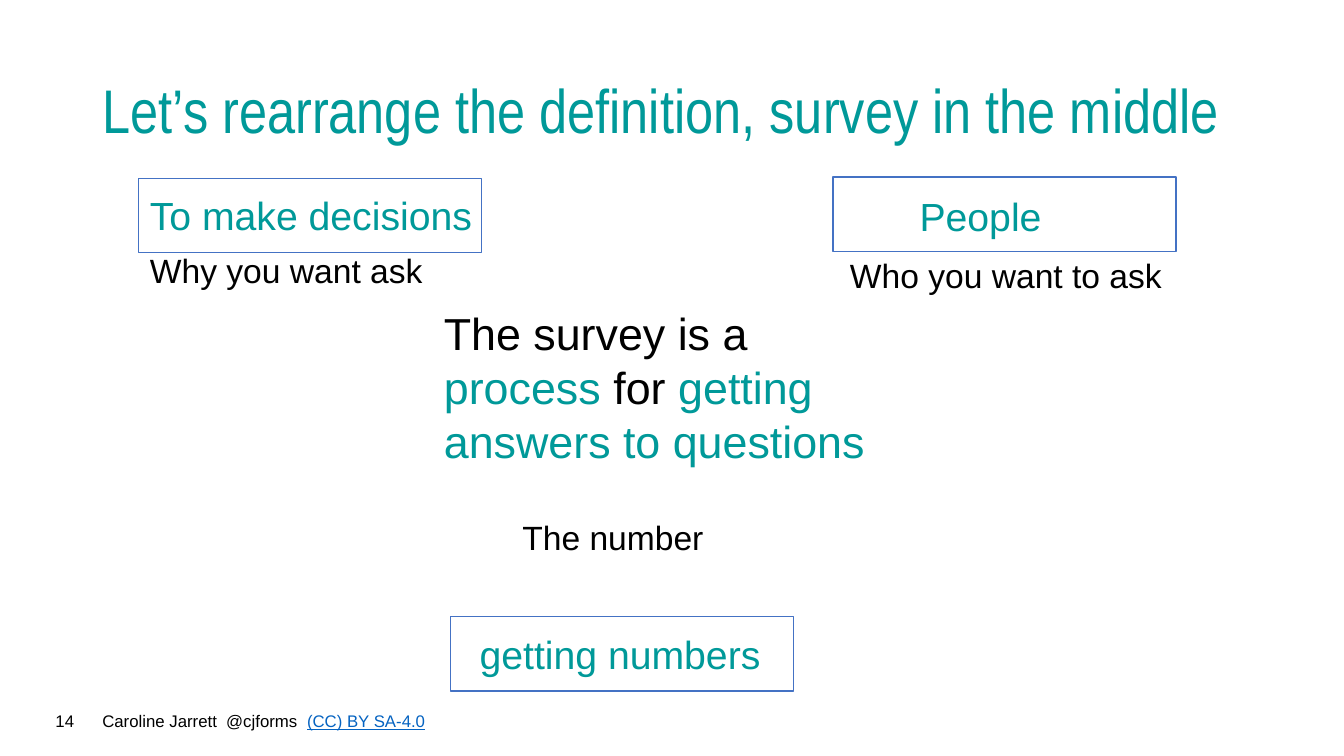
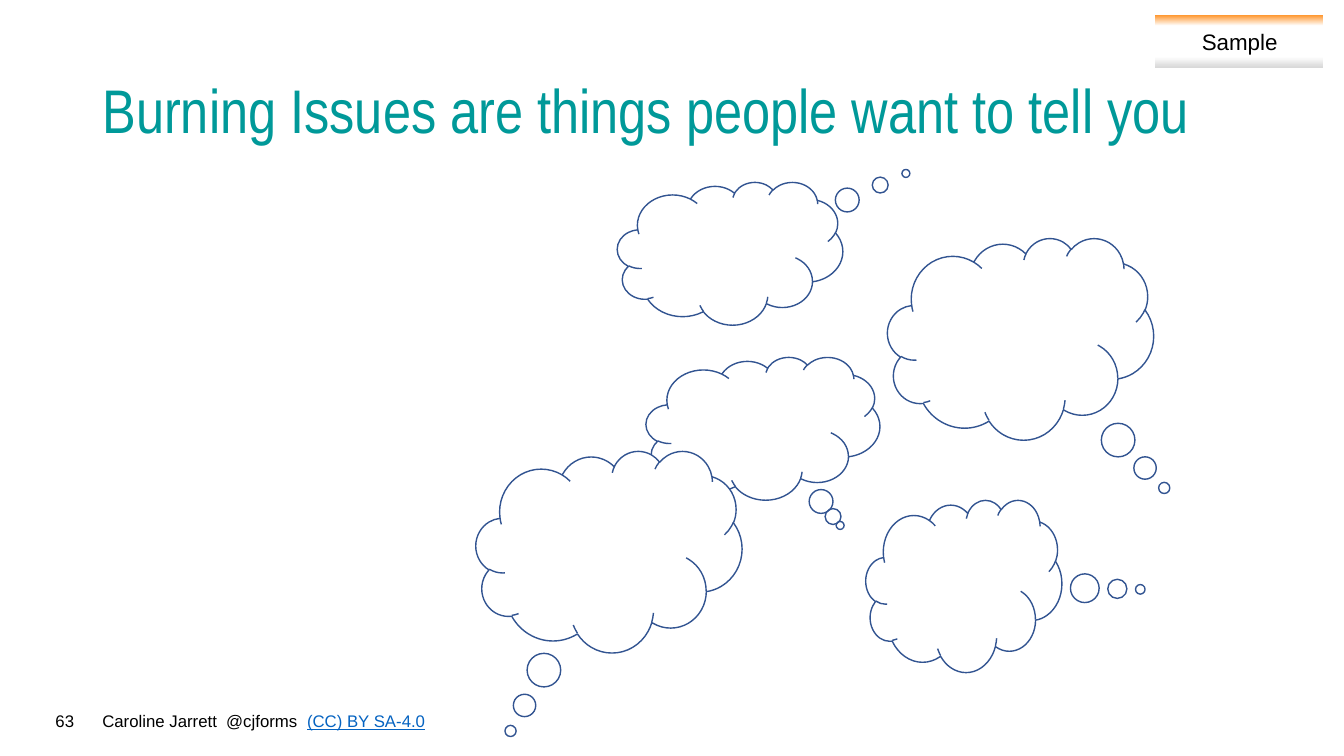
from copy import deepcopy

from pptx import Presentation
from pptx.dml.color import RGBColor
from pptx.enum.shapes import MSO_SHAPE as Shape
from pptx.enum.text import MSO_ANCHOR as Anchor, MSO_AUTO_SIZE as AutoSize, PP_ALIGN as Align
from pptx.oxml.ns import qn
from pptx.util import Pt

TEAL, BLACK, WHITE = "009999", "000000", "FFFFFF"
BOX_BLUE, CLOUD_BLUE, LINK_BLUE = "4472C4", "325491", "0563C1"
TITLE_ONLY = 5


def rgb(hex_code):
    return RGBColor.from_string(hex_code)


class Deck:
    """Holds the shared style and the slide being built; lengths are in points."""

    body_font, title_font = "Arial", "Arial Narrow"

    def __init__(self):
        self.prs = Presentation()
        self.prs.slide_width, self.prs.slide_height = Pt(960), Pt(540)
        self.slide = None

    def style(self, paragraph, size, color, align=Align.LEFT, font=None):
        paragraph.alignment = align
        paragraph.font.name = font or self.body_font
        paragraph.font.size = Pt(size)
        paragraph.font.color.rgb = rgb(color)

    def new_slide(self, title, number):
        self.slide = self.prs.slides.add_slide(self.prs.slide_layouts[TITLE_ONLY])
        heading = self.slide.shapes.title
        heading.left, heading.top, heading.width, heading.height = Pt(66), Pt(29), Pt(828), Pt(104)
        frame = heading.text_frame
        frame.text = title
        frame.word_wrap = True
        frame.auto_size = AutoSize.NONE
        frame.vertical_anchor = Anchor.MIDDLE
        self.style(frame.paragraphs[0], 44, TEAL, font=self.title_font)
        frame.paragraphs[0].line_spacing = 0.9
        self.footer(number)

    def footer(self, number):
        credit = self.text("Caroline Jarrett  @cjforms  ", 66, 504, 411, 22, 12)
        licence = credit.add_run()
        licence.text = "(CC) BY SA-4.0"
        licence.font.underline = True
        licence.font.color.rgb = rgb(LINK_BLUE)
        self.text(str(number), 0, 504, 60, 22, 12, align=Align.RIGHT)

    def text(self, words, left, top, width, height, size, color=BLACK, align=Align.LEFT):
        """Add a one-paragraph text box and return its paragraph."""
        box = self.slide.shapes.add_textbox(Pt(left), Pt(top), Pt(width), Pt(height))
        frame = box.text_frame
        frame.word_wrap = True
        frame.auto_size = AutoSize.SHAPE_TO_FIT_TEXT
        paragraph = frame.paragraphs[0]
        paragraph.add_run().text = words
        self.style(paragraph, size, color, align)
        return paragraph

    def definition(self, lines, left, top, width, height, size):
        """Add a text box of lines, each a list of (words, color) runs."""
        box = self.slide.shapes.add_textbox(Pt(left), Pt(top), Pt(width), Pt(height))
        frame = box.text_frame
        frame.word_wrap = True
        for index, line in enumerate(lines):
            paragraph = frame.add_paragraph() if index else frame.paragraphs[0]
            self.style(paragraph, size, BLACK)
            for words, color in line:
                run = paragraph.add_run()
                run.text = words
                run.font.color.rgb = rgb(color)

    def shape(self, kind, left, top, width, height, line=None, fill=None):
        shape = self.slide.shapes.add_shape(kind, Pt(left), Pt(top), Pt(width), Pt(height))
        shape.shadow.inherit = False
        if fill:
            shape.fill.solid()
            shape.fill.fore_color.rgb = rgb(fill)
        else:
            shape.fill.background()
        if line:
            shape.line.color.rgb = rgb(line)
            shape.line.width = Pt(1)
        else:
            shape.line.fill.background()
        return shape

    def thought(self, left, top, width, height, tail, fill=None):
        cloud = self.shape(Shape.CLOUD_CALLOUT, left, top, width, height, CLOUD_BLUE, fill)
        cloud.adjustments[0], cloud.adjustments[1] = tail

    def tag(self, words):
        """Add the corner label, shaded from orange through white to grey."""
        band = self.shape(Shape.RECTANGLE, 825, 11, 120, 37)
        band.fill.gradient()
        band.fill.gradient_angle = 270
        stop_list = band.element.find(".//" + qn("a:gsLst"))
        for stop in list(stop_list):
            stop_list.append(deepcopy(stop))
        shades = [(0, "FF9933"), (0.2, WHITE), (0.8, WHITE), (1, "D9D9D9")]
        for stop, (position, color) in zip(band.fill.gradient_stops, shades):
            stop.position = position
            stop.color.rgb = rgb(color)
        self.text(words, 827, 16.5, 117, 27, 16, align=Align.CENTER)


def build_definition(deck):
    deck.new_slide("Let’s rearrange the definition, survey in the middle", 14)
    deck.definition(
        [[("The survey is a", BLACK)],
         [("process ", TEAL), ("for ", BLACK), ("getting answers to questions", TEAL)]],
        310, 215, 340, 124, 32)
    for left, top in [(99, 127.5), (595, 126.5), (322, 440.5)]:
        deck.shape(Shape.RECTANGLE, left, top, 245, 53, BOX_BLUE)
    deck.text("To make decisions", 100, 133, 257, 41, 28, TEAL)
    deck.text("People", 613, 134, 138, 41, 28, TEAL, Align.RIGHT)
    deck.text("getting numbers", 335.5, 446.5, 217, 41, 28, TEAL)
    for prompt, left, top, width in [
        ("Why you want ask", 100, 175, 248),
        ("Who you want to ask", 600, 178.5, 270),
        ("The number", 366, 366, 156),
    ]:
        deck.text(prompt, left, top, width, 36, 24)


def build_burning_issues(deck):
    deck.new_slide("Burning Issues are things people want to tell you", 63)
    deck.thought(441, 130, 161, 102, (0.78, -0.56))
    deck.thought(634, 170, 190, 144, (0.54, 0.74))
    deck.thought(618.5, 357, 140, 123, (0.9, 0.02), WHITE)
    deck.thought(461.5, 255, 167, 102, (0.33, 0.68))
    deck.thought(340, 322, 190, 144, (-0.37, 0.89), WHITE)
    deck.tag("Sample")


def main():
    deck = Deck()
    build_definition(deck)
    build_burning_issues(deck)
    deck.prs.save("out.pptx")


if __name__ == "__main__":
    main()
